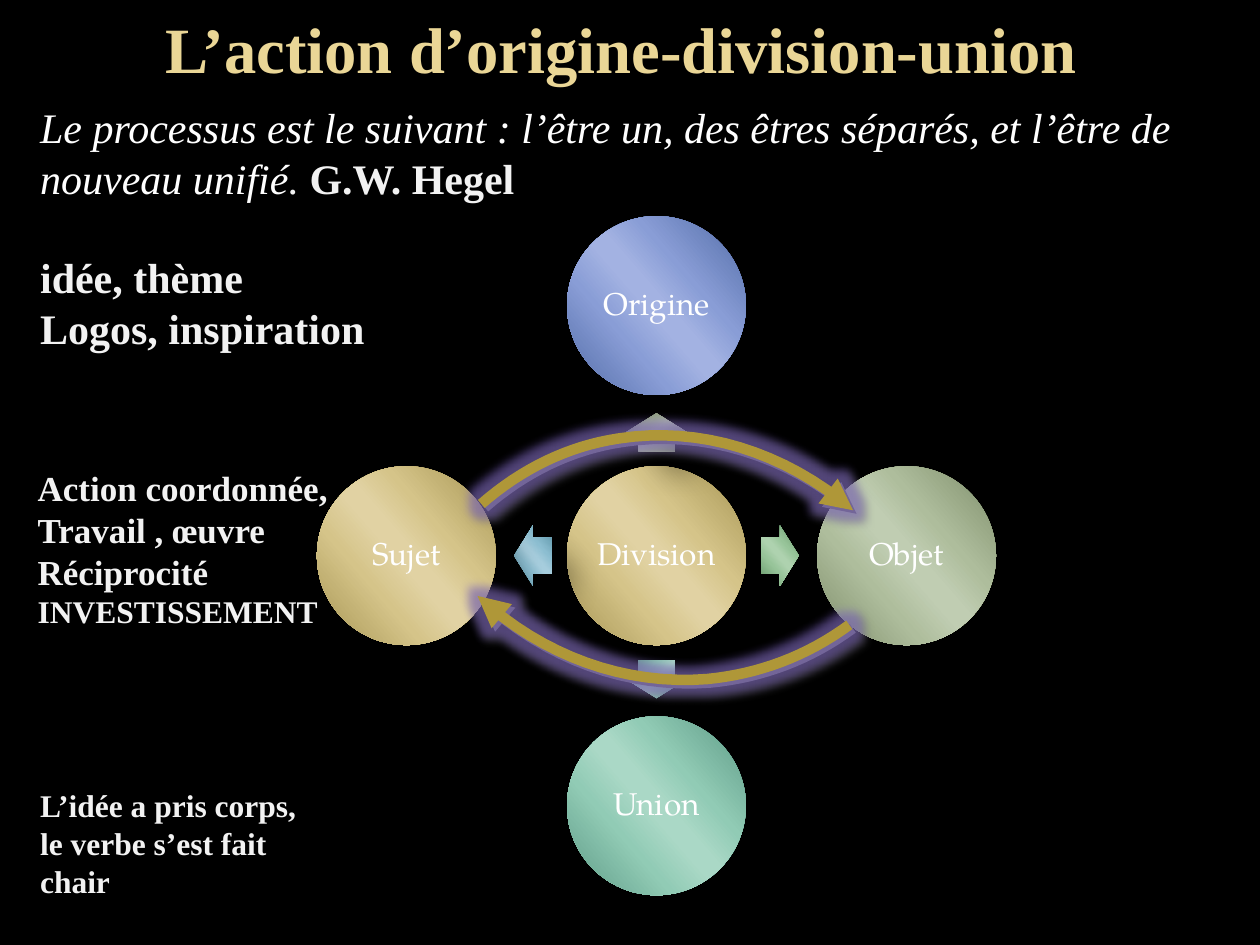
from lxml import etree
from pptx import Presentation
from pptx.dml.color import RGBColor
from pptx.enum.shapes import MSO_SHAPE
from pptx.enum.text import MSO_ANCHOR, PP_ALIGN
from pptx.oxml import parse_xml
from pptx.oxml.ns import nsdecls, qn
from pptx.util import Inches, Pt

DISC = MSO_SHAPE.OVAL
ARROW = MSO_SHAPE.RIGHT_ARROW
LEFT = PP_ALIGN.LEFT
CENTER = PP_ALIGN.CENTER
TOP = MSO_ANCHOR.TOP
MIDDLE = MSO_ANCHOR.MIDDLE
SERIF = "Times New Roman"
SHADE = ('<a:outerShdw {} blurRad="{}" dist="{}" dir="2700000" algn="tl" rotWithShape="0">'
         '<a:srgbClr val="{}"><a:alpha val="{}"/></a:srgbClr></a:outerShdw>')
GLOW = ('<a:glow {} rad="{}"><a:srgbClr val="8064D0">'
        '<a:alpha val="45000"/></a:srgbClr></a:glow>')


def hue(code):
    return RGBColor.from_string(code)


def write(frame, lines, align, anchor):
    frame.vertical_anchor = anchor
    for row, runs in enumerate(lines):
        para = frame.paragraphs[0] if row == 0 else frame.add_paragraph()
        para.alignment = align
        for text, code, style in runs:
            run = para.add_run()
            run.text = text
            run.font.color.rgb = hue(code)
            for key, value in style.items():
                setattr(run.font, key, value)


deck = Presentation()
deck.slide_width, deck.slide_height = Inches(10), Inches(7.5)
slide = deck.slides.add_slide(deck.slide_layouts[6])
slide.background.fill.solid()
slide.background.fill.fore_color.rgb = hue("000000")
shapes = slide.shapes

gold = ["A59452", "D5C489", "E1D2A3"]
blue = ["516BA6", "899DD6", "A3B2E2"]
sage = ["7D8D6A", "AEBD9C", "C0CDB2"]
green = ["639466", "97C499", "AED2AF"]
teal = ["5C9A85", "91CBB5", "AAD8C6"]
sky = ["568EA1", "8CBED1", "A6CDDD"]
stops = [0, 33, 47, 53, 68, 100]

mid_x, mid_y = 5.21, 4.41
disc, step, gap = 1.42, 1.985, 0.98
nodes = [(DISC, "Division", 0, 0, disc, disc, 0, gold)]
for name, dx, dy, turn, tint, tone in [
    ("Origine", 0, -1, 270, sage, blue),
    ("Objet", 1, 0, 0, green, sage),
    ("Union", 0, 1, 90, teal, teal),
    ("Sujet", -1, 0, 180, sky, gold),
]:
    nodes.append((ARROW, "", dx * gap, dy * gap, 0.3, 0.48, turn, tint))
    nodes.append((DISC, name, dx * step, dy * step, disc, disc, 0, tone))

label = {"name": "TeX Gyre Pagella", "size": Pt(18)}
for kind, name, dx, dy, wide, high, turn, tone in nodes:
    node = shapes.add_shape(kind, Inches(mid_x + dx - wide / 2), Inches(mid_y + dy - high / 2),
                            Inches(wide), Inches(high))
    node.rotation = turn
    node.line.fill.background()
    node.fill.gradient()
    node.fill.gradient_angle = 221
    props = node.element.spPr
    ramp = props.find(qn("a:gradFill")).find(qn("a:gsLst"))
    for old in list(ramp):
        ramp.remove(old)
    for stop, code in zip(stops, tone + tone[::-1]):
        mark = etree.SubElement(ramp, qn("a:gs"), pos=str(stop * 1000))
        etree.SubElement(mark, qn("a:srgbClr"), val=code)
    node.shadow.inherit = False
    shade = SHADE.format(nsdecls("a"), Pt(15), Pt(18), "000000", 26000)
    props.find(qn("a:effectLst")).append(parse_xml(shade))
    if kind == ARROW:
        node.adjustments[0] = 0.6
        node.adjustments[1] = 0.5
    else:
        frame = node.text_frame
        frame.word_wrap = False
        for side in ("left", "right", "top", "bottom"):
            setattr(frame, "margin_" + side, Inches(0.03))
        write(frame, [[(name, "FFFFFF", label)]], CENTER, MIDDLE)
        frame.paragraphs[0].line_spacing = 0.9

arcs = [
    [(3.82, 4), (4.14, 3.72), (4.51, 3.54), (4.91, 3.48),
     (5.55, 3.38), (6.22, 3.58), (6.77, 4.05)],
    [(6.74, 4.96), (6.4, 5.21), (6.02, 5.35), (5.61, 5.39),
     (4.96, 5.44), (4.31, 5.21), (3.79, 4.73)],
]
parts = 16
for arc in arcs:
    pen = shapes.build_freeform(Inches(arc[0][0]), Inches(arc[0][1]))
    for first in (0, 3):
        knots = arc[first:first + 4]
        dots = []
        for tick in range(1, parts + 1):
            t = tick / parts
            mix = [(1 - t) ** 3, 3 * t * (1 - t) ** 2, 3 * t * t * (1 - t), t ** 3]
            dots.append([Inches(sum(m * k[axis] for m, k in zip(mix, knots)))
                         for axis in (0, 1)])
        pen.add_line_segments(dots, close=False)
    curve = pen.convert_to_shape()
    curve.fill.background()
    curve.line.color.rgb = hue("AF9738")
    curve.line.width = Pt(6)
    props = curve.element.spPr
    etree.SubElement(props.find(qn("a:ln")), qn("a:tailEnd"), type="triangle")
    curve.shadow.inherit = False
    glow = GLOW.format(nsdecls("a"), Pt(11))
    shade = SHADE.format(nsdecls("a"), 0, Pt(2.8), "69676D", 100000)
    for effect in (glow, shade):
        props.find(qn("a:effectLst")).append(parse_xml(effect))

head = {"name": SERIF, "size": Pt(36.9), "bold": True}
quote = {"name": SERIF, "size": Pt(24), "italic": True}
large = {"name": SERIF, "size": Pt(24), "bold": True}
plain = {"name": SERIF, "size": Pt(20), "bold": True}
small = {"name": SERIF, "size": Pt(18), "bold": True}
pale = "F2F2F2"
notes = [
    (0, 0, 10, 0.76, CENTER, MIDDLE,
     [[("L’action d’origine-division-union ", "EAD696", head)]]),
    (0.22, 0.76, 9.42, 0.91, LEFT, TOP,
     [[("Le processus est le suivant : l’être un, des êtres séparés, "
        "et l’être de nouveau unifié", "FFFFFF", quote),
       (". ", pale, quote), ("G.W. Hegel", pale, large)]]),
    (0.22, 1.95, 3.78, 0.91, LEFT, TOP,
     [[("idée, thème", pale, large)], [("Logos, inspiration", pale, large)]]),
    (0.2, 3.65, 3.42, 1.75, LEFT, TOP,
     [[("Action coordonnée,", pale, plain)], [("Travail , œuvre", pale, plain)],
      [("Réciprocité", pale, plain)], [("INVESTISSEMENT", pale, small)]]),
    (0.22, 6.19, 2.5, 0.71, LEFT, TOP,
     [[("L’idée a pris corps,", pale, small)],
      [("le verbe s’est fait chair", pale, small)]]),
]
for x, y, wide, high, align, anchor, lines in notes:
    box = shapes.add_textbox(Inches(x), Inches(y), Inches(wide), Inches(high))
    box.text_frame.word_wrap = True
    write(box.text_frame, lines, align, anchor)

deck.save("out.pptx")
